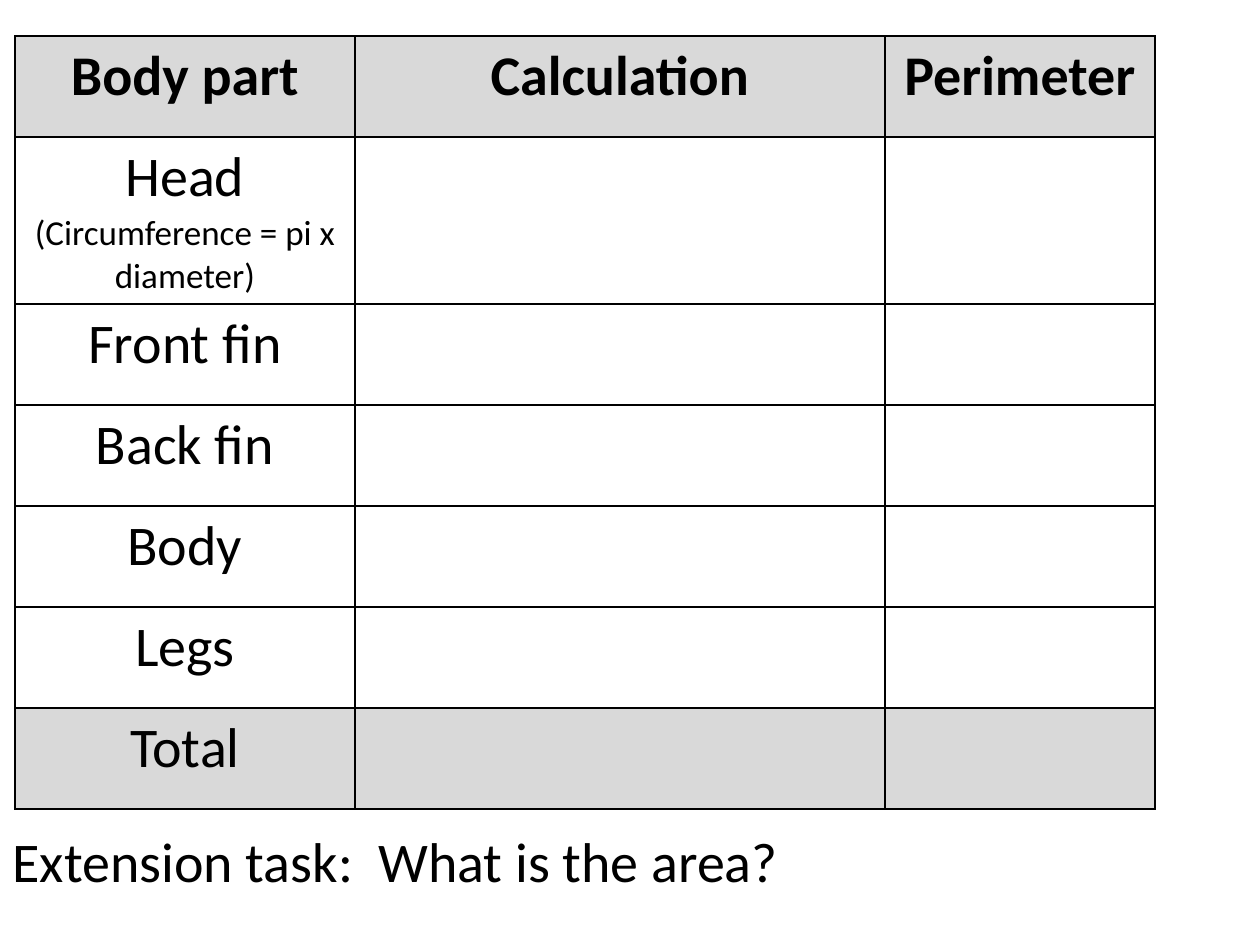
"""Build a worksheet slide with a perimeter table and an extension task."""
from dataclasses import dataclass
from itertools import product

from lxml.etree import SubElement
from pptx import Presentation
from pptx.dml.color import RGBColor
from pptx.enum.text import MSO_AUTO_SIZE, PP_ALIGN
from pptx.oxml.ns import qn
from pptx.util import Emu, Pt

SCALE = 914400 / 126
HUES = {"ink": "000000", "band": "D9D9D9"}
COLS = (340, 530, 270)
LINE = 101


@dataclass(frozen=True)
class Run:
    text: str
    size: int = 32
    bold: bool = False


@dataclass(frozen=True)
class Row:
    cells: tuple[tuple[Run, ...], ...]
    high: int = LINE
    band: bool = False


def label(*runs: Run) -> tuple[tuple[Run, ...], ...]:
    return (runs, (), ())


ROWS = (
    Row(tuple((Run(text, bold=True),) for text in ("Body part", "Calculation", "Perimeter")), band=True),
    Row(label(Run("Head "), Run("(Circumference = pi x diameter)", 20)), high=166),
    *(Row(label(Run(text))) for text in ("Front fin", "Back fin", "Body", "Legs")),
    Row(label(Run("Total")), band=True),
)


def px(num: int) -> Emu:
    return Emu(round(num * SCALE))


def hue(name: str) -> RGBColor:
    return RGBColor.from_string(HUES[name])


def write(para, runs: tuple[Run, ...], align: PP_ALIGN) -> None:
    para.alignment = align
    for item in runs:
        run = para.add_run()
        run.text = item.text
        form = {"name": "Calibri", "size": Pt(item.size), "bold": item.bold}
        for key, value in form.items():
            setattr(run.font, key, value)
        run.font.color.rgb = hue("ink")


def border(cell) -> None:
    props = cell._tc.get_or_add_tcPr()
    for side in ("lnL", "lnR", "lnT", "lnB"):
        line = SubElement(props, qn(f"a:{side}"), w=str(Pt(1)))
        fill = SubElement(line, qn("a:solidFill"))
        SubElement(fill, qn("a:srgbClr"), val=HUES["ink"])


def paint(cell, band: bool) -> None:
    if band:
        cell.fill.solid()
        cell.fill.fore_color.rgb = hue("band")
    else:
        cell.fill.background()


def grid(slide, left: int, top: int) -> None:
    high = sum(row.high for row in ROWS)
    frame = slide.shapes.add_table(len(ROWS), len(COLS), px(left), px(top), px(sum(COLS)), px(high))
    table = frame.table
    for key, value in {"first_row": False, "horz_banding": False}.items():
        setattr(table, key, value)
    for col, wide in zip(table.columns, COLS):
        col.width = px(wide)
    for line, row in zip(table.rows, ROWS):
        line.height = px(row.high)
    for y, x in product(range(len(ROWS)), range(len(COLS))):
        cell = table.cell(y, x)
        border(cell)
        paint(cell, ROWS[y].band)
        write(cell.text_frame.paragraphs[0], ROWS[y].cells[x], PP_ALIGN.CENTER)


def task(slide, left: int, top: int, wide: int, high: int) -> None:
    box = slide.shapes.add_textbox(*map(px, (left, top, wide, high)))
    for key, value in {"word_wrap": True, "auto_size": MSO_AUTO_SIZE.SHAPE_TO_FIT_TEXT}.items():
        setattr(box.text_frame, key, value)
    write(box.text_frame.paragraphs[0], (Run("Extension task:  What is the area?"),), PP_ALIGN.LEFT)


def main() -> None:
    deck = Presentation()
    for key, value in {"slide_width": px(1260), "slide_height": px(945)}.items():
        setattr(deck, key, value)
    slide = deck.slides.add_slide(deck.slide_layouts[6])
    grid(slide, 15, 36)
    task(slide, 0, 820, 1086, 81)
    deck.save("out.pptx")


if __name__ == "__main__":
    main()
